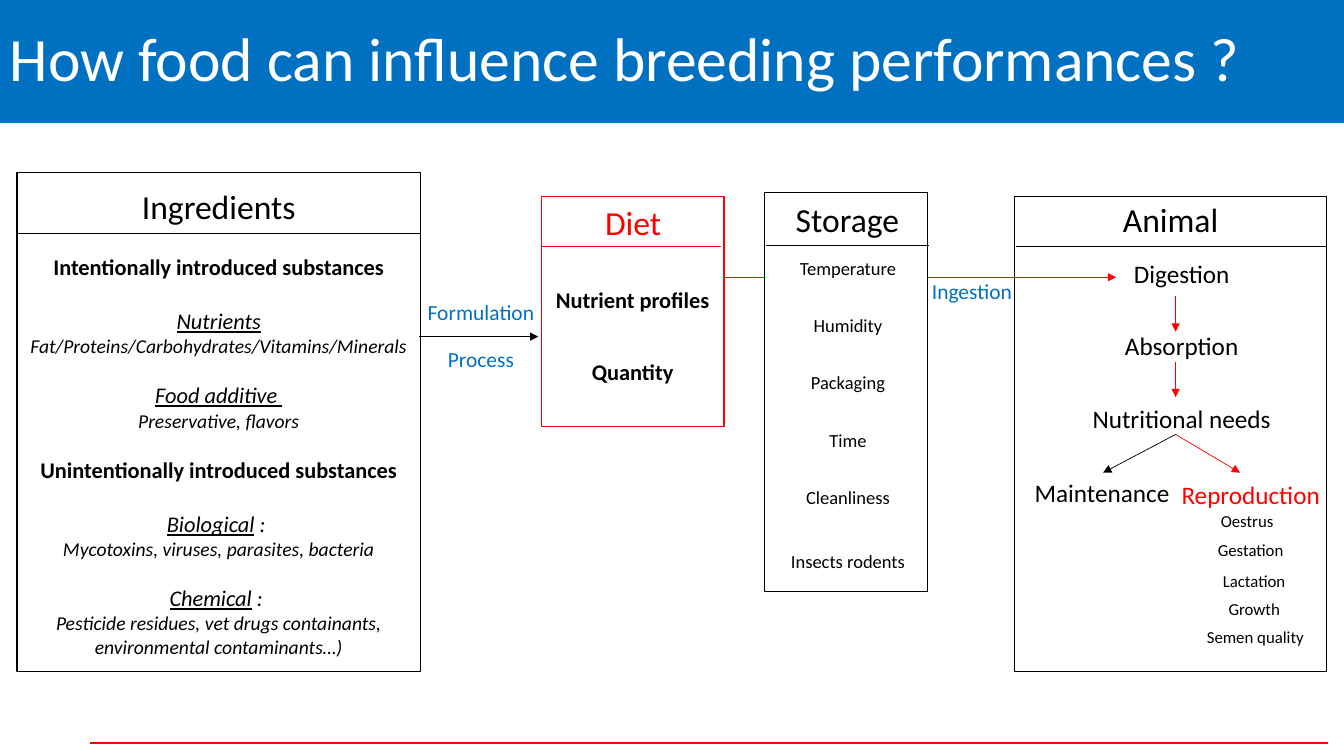
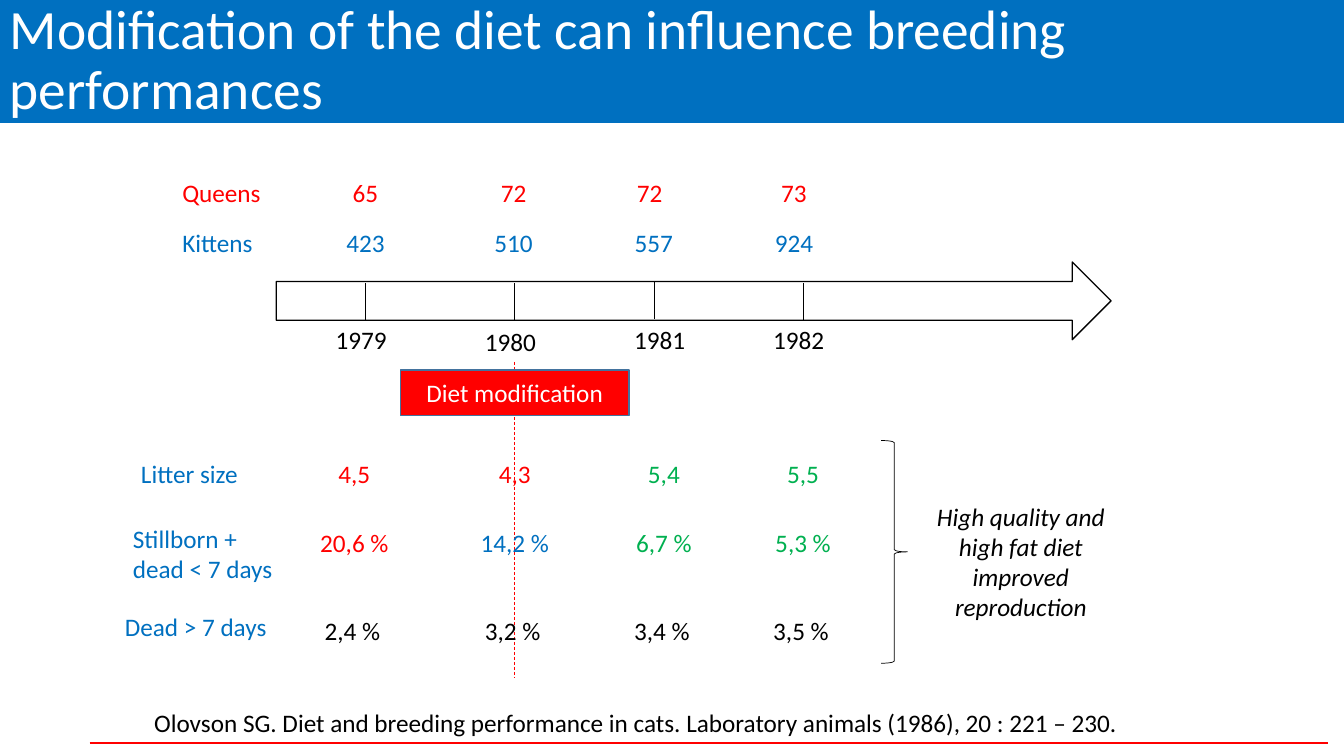
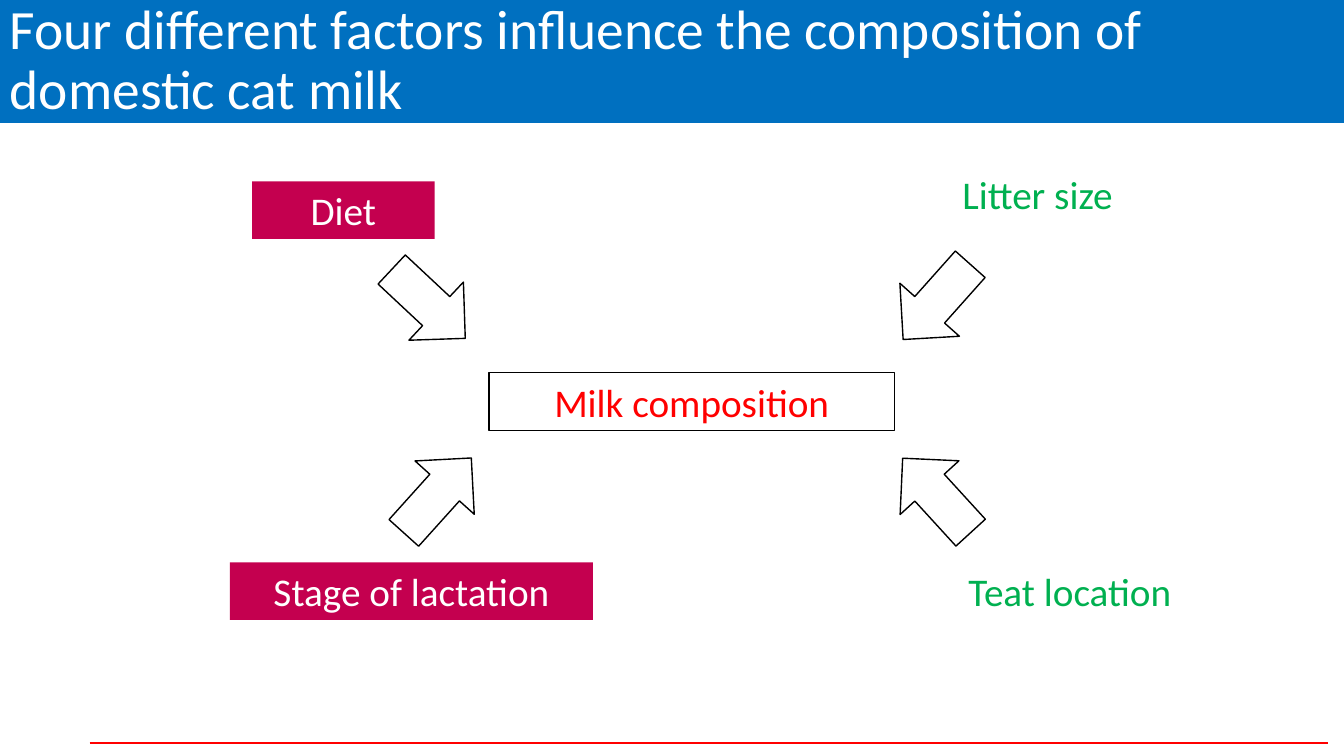
from lxml import etree
from pptx import Presentation
from pptx import util as u
from pptx.dml.color import RGBColor
from pptx.enum import dml, shapes, text
from pptx.oxml import ns

BLUE, RED, GREEN, PINK = "0070C0", "FF0000", "00B050", "C4004F"
BLACK, WHITE, STEEL = "000000", "FFFFFF", "43739E"
LEFT, CENTER = text.PP_ALIGN.LEFT, text.PP_ALIGN.CENTER
TOP, MIDDLE = text.MSO_ANCHOR.TOP, text.MSO_ANCHOR.MIDDLE
SHAPE = shapes.MSO_SHAPE


def rgb(color):
    return RGBColor.from_string(color)


class Deck:
    """Holds the shared style and the current slide."""

    font = "Calibri"

    def __init__(self):
        self.presentation = Presentation()
        self.presentation.slide_width = u.Inches(13.33)
        self.presentation.slide_height = u.Inches(7.5)
        self.slide = None

    def new_slide(self, title, size):
        self.slide = self.presentation.slides.add_slide(self.presentation.slide_layouts[6])
        self.line((0.89, 7.37), (13.17, 7.37), RED, 1)
        band = self.box((0, 0, 13.33, 1.22), BLUE, None)
        self.fill_text(band, [title], size, WHITE, LEFT, MIDDLE, spacing=0.9)

    def box(self, at, fill=WHITE, line=BLACK, width=1, kind=SHAPE.RECTANGLE, rotation=0):
        shape = self.slide.shapes.add_shape(kind, *map(u.Inches, at))
        shape.shadow.inherit = False
        shape.rotation = rotation
        if fill:
            shape.fill.solid()
            shape.fill.fore_color.rgb = rgb(fill)
        else:
            shape.fill.background()
        if line:
            shape.line.color.rgb = rgb(line)
            shape.line.width = u.Pt(width)
        else:
            shape.line.fill.background()
        return shape

    def line(self, start, end, color=BLACK, width=0.5, arrow=False, dashed=False):
        connector = self.slide.shapes.add_connector(
            shapes.MSO_CONNECTOR.STRAIGHT, *map(u.Inches, start + end))
        connector.line.color.rgb = rgb(color)
        connector.line.width = u.Pt(width)
        if dashed:
            connector.line.dash_style = dml.MSO_LINE.DASH
        if arrow:
            outline = connector.line._get_or_add_ln()
            etree.SubElement(outline, ns.qn("a:tailEnd"), type="triangle")
        etree.SubElement(connector._element.spPr, ns.qn("a:effectLst"))

    def label(self, at, words, size=18, color=BLACK, align=CENTER, **style):
        shape = self.slide.shapes.add_textbox(*map(u.Inches, at))
        self.fill_text(shape, [words], size, color, align, **style)

    def fill_text(self, shape, words, size, color, align=CENTER, anchor=TOP,
                  spacing=None, gaps=(), bold=False, italic=False):
        """Put one paragraph per entry; gaps are the points before each later one."""
        frame = shape.text_frame
        frame.word_wrap = True
        frame.vertical_anchor = anchor
        frame.text = "\n".join(words)
        for paragraph in frame.paragraphs:
            paragraph.alignment = align
            paragraph.line_spacing = spacing
            for run in paragraph.runs:
                self.style(run, size, color, bold, italic)
        for paragraph, gap in zip(frame.paragraphs[1:], gaps):
            paragraph.space_before = u.Pt(gap)

    def style(self, run, size, color, bold=False, italic=False, underline=False):
        font = run.font
        font.name, font.size, font.color.rgb = self.font, u.Pt(size), rgb(color)
        font.bold, font.italic, font.underline = bold, italic, underline

    def fill_runs(self, shape, paragraphs):
        """Each paragraph is a gap in points and runs of (text, size, marks b, i, u)."""
        frame = shape.text_frame
        frame.word_wrap = True
        frame.vertical_anchor = MIDDLE
        for index, (gap, runs) in enumerate(paragraphs):
            paragraph = frame.add_paragraph() if index else frame.paragraphs[0]
            paragraph.alignment = CENTER
            if gap:
                paragraph.space_before = u.Pt(gap)
            for words, size, marks in runs:
                run = paragraph.add_run()
                run.text = words
                self.style(run, size, BLACK, "b" in marks, "i" in marks, "u" in marks)


def food_slide(deck):
    deck.new_slide("How food can influence breeding performances ?", 44)

    # Frames and the path from diet to animal
    deck.box((10.06, 1.95, 3.1, 4.71))
    deck.line((7.19, 2.75), (11.07, 2.75), RED, arrow=True)
    deck.box((5.37, 1.95, 1.81, 2.28), line=RED)
    deck.box((7.58, 1.91, 1.62, 3.96))
    ingredients = deck.box((0.17, 1.71, 4, 4.95))

    # Frame headings and the rules below them
    for at, words, color in [
        ((5.28, 2, 2, 0.57), "Diet", RED),
        ((7.6, 1.97, 1.61, 0.57), "Storage", BLACK),
        ((10.06, 1.97, 3.1, 0.48), "Animal", BLACK),
    ]:
        deck.label(at, words, 24, color, spacing=0.9)
    for left, right, y, color in [(0.17, 4.17, 2.32, BLACK), (5.37, 7.15, 2.44, RED),
                                  (7.6, 9.21, 2.43, BLACK), (10.08, 13.15, 2.44, BLACK)]:
        deck.line((left, y), (right, y), color)

    # Ingredients
    deck.fill_runs(ingredients, [
        (0, [("Ingredients", 24, "")]),
        (19.5, [("Intentionally introduced substances", 16, "b")]),
        (19.5, [("Nutrients", 16, "iu"), (" ", 16, "i"),
                ("Fat/Proteins/Carbohydrates/Vitamins/Minerals", 14, "i")]),
        (17, [("Food additive ", 16, "iu")]),
        (0, [("Preservative, flavors", 14, "i")]),
        (17, [("Unintentionally introduced substances", 16, "b")]),
        (19.5, [("Biological", 16, "iu"), (" : ", 16, "i")]),
        (0, [("Mycotoxins, viruses, parasites, bacteria", 14, "i")]),
        (17, [("Chemical", 16, "iu"), (" : ", 16, "i")]),
        (0, [("Pesticide residues, vet drugs containants, "
              "environmental contaminants…)", 14, "i")]),
    ])

    # Steps between the frames
    deck.line((4.16, 3.34), (5.34, 3.34), arrow=True)
    for left, top, words in [(4.13, 2.99, "Formulation"), (4.13, 3.45, "Process"),
                             (9, 2.78, "Ingestion")]:
        deck.label((left, top, 1.28, 0.28), words, 15.3, BLUE, spacing=0.7)

    # Diet and storage
    for top, words in [(2.82, "Nutrient profiles"), (3.53, "Quantity")]:
        deck.label((5.37, top, 1.81, 0.57), words, 16, spacing=0.9, bold=True)
    conditions = deck.slide.shapes.add_textbox(*map(u.Inches, (7.59, 2.54, 1.64, 3.26)))
    deck.fill_text(conditions, ["Temperature", "Humidity", "Packaging", "Time",
                                "Cleanliness", "Insects rodents"],
                   13.2, BLACK, spacing=0.8, gaps=(28.3, 28.3, 28.3, 28.3, 32.8))

    # Animal: chain of needs
    for top, words in [(2.55, "Digestion"), (3.26, "Absorption"), (3.99, "Nutritional needs")]:
        deck.label((10.55, top, 2.34, 0.57), words, spacing=0.9)
    for top in (2.94, 3.59):
        deck.line((11.66, top), (11.66, top + 0.35), RED, arrow=True)
    for x, color in [(10.94, BLACK), (12.3, RED)]:
        deck.line((11.66, 4.31), (x, 4.69), color, arrow=True)
    deck.label((9.76, 4.72, 2.34, 0.57), "Maintenance", spacing=0.9)
    deck.label((11.57, 4.74, 1.67, 0.57), "Reproduction", color=RED, spacing=0.9)

    # Animal: stages of reproduction
    for left, top, width, words, align in [
        (12.01, 5.02, 0.73, "Oestrus", LEFT),
        (11.98, 5.31, 0.92, "Gestation", LEFT),
        (12.03, 5.61, 0.83, "Lactation", LEFT),
        (11.98, 5.89, 0.92, "Growth", CENTER),
        (11.85, 6.17, 1.24, "Semen quality ", CENTER),
    ]:
        stage = deck.box((left, top, width, 0.3), line=None)
        deck.fill_text(stage, [words], 12, BLACK, align)


def diet_slide(deck):
    deck.new_slide("Modification of the diet can influence breeding performances", 39.6)
    deck.label((1.43, 6.97, 10.48, 0.4),
               "Olovson SG. Diet and breeding performance in cats. "
               "Laboratory animals (1986), 20 : 221 – 230.", align=LEFT)

    # Timeline
    deck.box((2.74, 2.6, 8.28, 0.77), kind=SHAPE.RIGHT_ARROW)
    for year, x, tick_top, left, top in [
        ("1979", 3.62, 2.81, 3.23, 3.17), ("1980", 5.1, 2.81, 4.71, 3.19),
        ("1981", 6.49, 2.79, 6.19, 3.17), ("1982", 7.97, 2.81, 7.57, 3.17),
    ]:
        deck.line((x, tick_top), (x, tick_top + 0.37))
        deck.label((left, top, 0.79, 0.4), year, align=LEFT)

    # Change of diet
    deck.line((5.1, 3.59), (5.1, 6.73), RED, dashed=True)
    change = deck.box((3.97, 3.67, 2.27, 0.45), RED, STEEL)
    deck.fill_text(change, ["Diet modification"], 18, WHITE, anchor=MIDDLE)

    # Row names
    for at, words, color in [
        ((1.71, 1.71, 1.17, 0.4), "Queens", RED),
        ((1.71, 2.21, 1.17, 0.4), "Kittens", BLUE),
        ((1.3, 4.5, 1.42, 0.4), "Litter size", BLUE),
        ((1.22, 5.14, 1.61, 0.71), "Stillborn + dead < 7 days", BLUE),
        ((1.14, 6.02, 1.61, 0.4), "Dead > 7 days", BLUE),
    ]:
        deck.label(at, words, color=color, align=LEFT)

    # Yearly values
    outcome_lefts = (2.93, 4.52, 6, 7.38)
    for top, lefts, values, colors in [
        (1.71, (3.04, 4.51, 5.86, 7.29), ("65", "72", "72", "73"), [RED] * 4),
        (2.21, (3.04, 4.51, 5.9, 7.29), ("423", "510", "557", "924"), [BLUE] * 4),
        (4.5, outcome_lefts, ("4,5", "4,3", "5,4", "5,5"), (RED, RED, GREEN, GREEN)),
        (5.18, outcome_lefts, ("20,6 %", "14,2 %", "6,7 %", "5,3 %"),
         (RED, BLUE, GREEN, GREEN)),
        (6.06, [left - 0.02 for left in outcome_lefts],
         ("2,4 %", "3,2 %", "3,4 %", "3,5 %"), [BLACK] * 4),
    ]:
        for left, value, color in zip(lefts, values, colors):
            deck.label((left, top, 1.17, 0.4), value, color=color)

    # Conclusion
    deck.box((8.74, 4.37, 0.26, 2.21), None, width=0.5, kind=SHAPE.RIGHT_BRACE)
    deck.label((9.19, 4.92, 1.87, 1.31),
               "High quality and high fat diet improved reproduction", italic=True)


def milk_slide(deck):
    deck.new_slide("Four different factors influence the composition of domestic cat milk", 39.6)

    # Centre and the arrows pointing to it
    milk = deck.box((4.85, 3.7, 4.02, 0.57), None, width=0.75)
    deck.fill_text(milk, ["Milk composition"], 28, RED)
    for left, top, rotation in [(3.75, 2.62, 43.1), (3.84, 4.52, 312),
                                (8.79, 2.6, 131.7), (8.79, 4.52, 227.6)]:
        deck.box((left, top, 1, 0.79), kind=SHAPE.RIGHT_ARROW, rotation=rotation)

    # Factors
    for left, top, width, words in [(2.5, 1.8, 1.81, "Diet"),
                                    (2.28, 5.58, 3.6, "Stage of lactation")]:
        factor = deck.box((left, top, width, 0.57), PINK, None)
        deck.fill_text(factor, [words], 28, WHITE)
    for left, top, words in [(8.35, 1.64, "Litter size"), (8.67, 5.58, "Teat location")]:
        deck.label((left, top, 3.88, 0.57), words, 28, GREEN)


def main():
    deck = Deck()
    food_slide(deck)
    diet_slide(deck)
    milk_slide(deck)
    deck.presentation.save("out.pptx")


if __name__ == "__main__":
    main()
